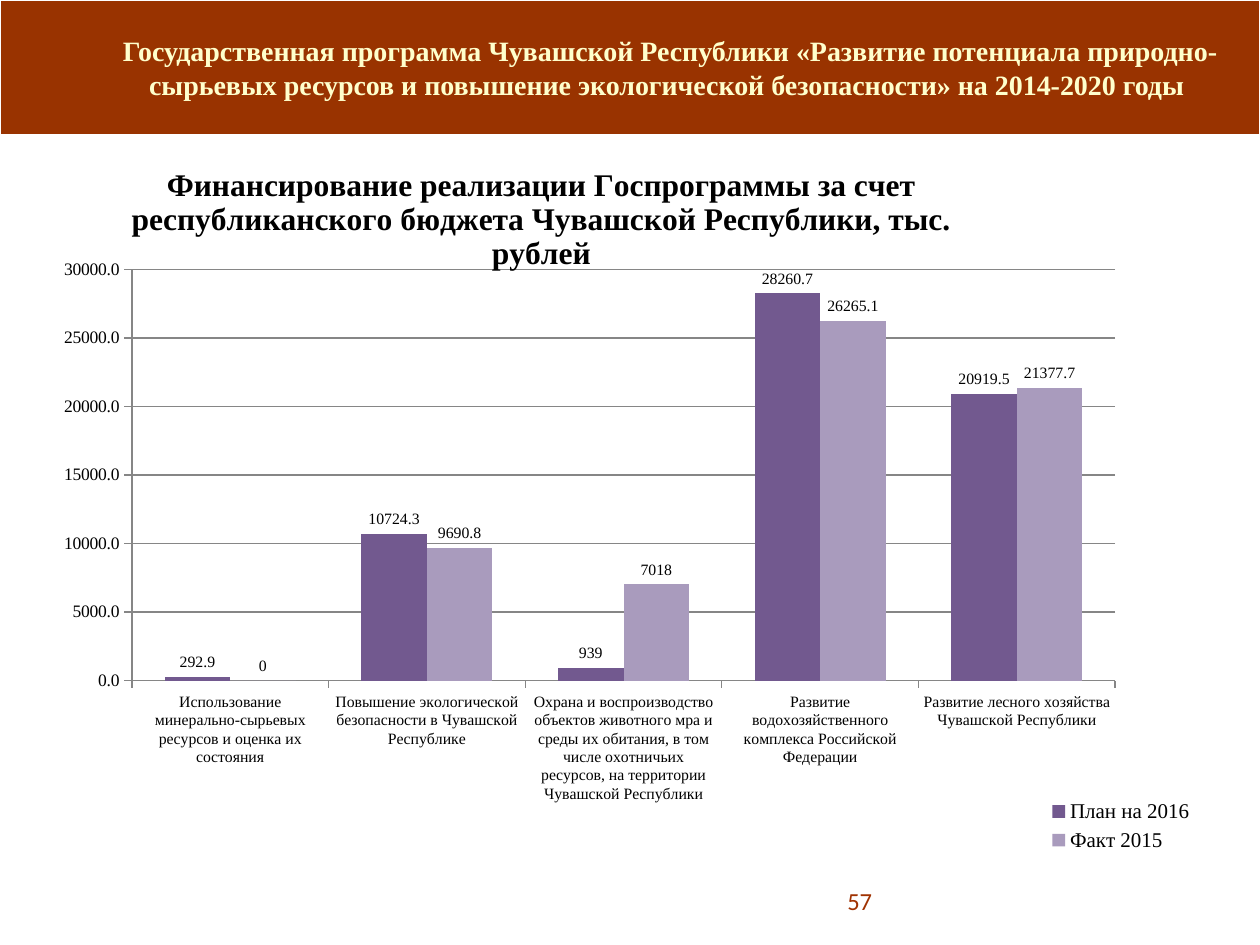
from lxml import etree
from pptx import Presentation
from pptx.chart.data import CategoryChartData as ChartData
from pptx.dml.color import RGBColor as Color
from pptx.enum.chart import XL_CHART_TYPE as ChartType, XL_LABEL_POSITION as LabelPosition
from pptx.enum.chart import XL_LEGEND_POSITION as LegendPosition, XL_TICK_MARK as TickMark
from pptx.enum.shapes import MSO_SHAPE as Shape
from pptx.enum.text import MSO_ANCHOR as Anchor, PP_ALIGN as Align
from pptx.oxml.ns import qn
from pptx.util import Inches, Pt

COLORS = {
    "band": "993300", "white": "FFFFFF", "heading": "FFFFCC", "number": "A03202",
    "text": "000000", "plan": "72598F", "fact": "A99BBD", "grid": "868686",
}
SERIF = "Times New Roman"


def set_font(font, size, color="text", name=SERIF, bold=False):
    for key, value in {"size": Pt(size), "name": name, "bold": bold}.items():
        setattr(font, key, value)
    font.color.rgb = Color.from_string(COLORS[color])


def place(part, index, inner=False, **shares):
    for old in part.findall(qn("c:layout")):
        part.remove(old)
    layout = etree.Element(qn("c:layout"))
    part.insert(index, layout)
    manual = etree.SubElement(layout, qn("c:manualLayout"))
    settings = {"layoutTarget": "inner"} if inner else {}
    settings |= {"xMode": "edge", "yMode": "edge"} | shares
    for tag, value in settings.items():
        etree.SubElement(manual, qn(f"c:{tag}")).set("val", str(value))


deck = Presentation()
deck.slide_width, deck.slide_height = Inches(10), Inches(7.5)
page = deck.slides.add_slide(deck.slide_layouts[6])
width, height = deck.slide_width, deck.slide_height
band_height = int(height / 7)

band = page.shapes.add_shape(Shape.RECTANGLE, 0, 0, width, band_height)
band.shadow.inherit = False
band.fill.solid()
band.fill.fore_color.rgb = Color.from_string(COLORS["band"])
band.line.color.rgb = Color.from_string(COLORS["white"])
band.line.width = Pt(0.75)

texts = [
    ("Государственная программа Чувашской Республики «Развитие потенциала "
     "природно-сырьевых ресурсов и повышение экологической безопасности» на 2014-2020 годы ",
     (0.083, 0, 0.898, 1 / 7), Align.CENTER, (16, "heading", SERIF, True)),
    ("57", (0.587, 0.927, 0.115, 0.053), Align.RIGHT, (14, "number", "Calibri")),
]
for words, (left, top, wide, high), align, style in texts:
    box = page.shapes.add_textbox(
        int(left * width), int(top * height), int(wide * width), int(high * height))
    frame = box.text_frame
    frame.word_wrap = True
    frame.vertical_anchor = Anchor.MIDDLE
    para = frame.paragraphs[0]
    para.alignment = align
    span = para.add_run()
    span.text = words
    set_font(span.font, *style)

data = ChartData(number_format="General")
data.categories = [
    "Использование минерально-сырьевых ресурсов и оценка их состояния",
    "Повышение экологической безопасности в Чувашской Республике",
    "Охрана и воспроизводство объектов животного мра и среды их обитания, "
    "в том числе охотничьих ресурсов, на территории Чувашской Республики",
    "Развитие водохозяйственного комплекса Российской Федерации",
    "Развитие лесного хозяйства Чувашской Республики",
]
data.add_series("План на 2016", [292.9, 10724.3, 939, 28260.7, 20919.5])
data.add_series("Факт 2015", [0, 9690.8, 7018, 26265.1, 21377.7])
chart = page.shapes.add_chart(
    ChartType.COLUMN_CLUSTERED, int(0.035 * width), int(0.16 * height),
    int(0.929 * width), int(0.84 * height), data).chart
set_font(chart.font, 18, name="Calibri")

chart.has_title = True
title = chart.chart_title
para = title.text_frame.paragraphs[0]
span = para.add_run()
span.text = ("Финансирование реализации Госпрограммы за счет "
             "республиканского бюджета Чувашской Республики, тыс. рублей")
set_font(span.font, 18, bold=True)
title.include_in_layout = False
place(title._element, 1, x=0.07, y=0.01)

chart.has_legend = True
legend = chart.legend
legend.position = LegendPosition.RIGHT
legend.include_in_layout = False
set_font(legend.font, 12)
place(legend._element, 1, x=0.85, y=0.81, w=0.14, h=0.08)

plot = chart.plots[0]
plot.gap_width, plot.overlap, plot.vary_by_categories = 100, 0, False
place(plot._element.getparent(), 0, inner=True, x=0.075, y=0.149, w=0.84, h=0.518)
for series, color in zip(plot.series, ("plan", "fact")):
    series.format.fill.solid()
    series.format.fill.fore_color.rgb = Color.from_string(COLORS[color])
    labels = series.data_labels
    labels.show_value = True
    labels.position = LabelPosition.OUTSIDE_END
    set_font(labels.font, 9)

values = chart.value_axis
scale = {"minimum_scale": 0, "maximum_scale": 30000, "major_unit": 5000,
         "has_major_gridlines": True}
for key, value in scale.items():
    setattr(values, key, value)
values.tick_labels.number_format = "0.0"
values.tick_labels.number_format_is_linked = False
for axis, size in ((chart.category_axis, 9), (values, 10)):
    axis.major_tick_mark = TickMark.OUTSIDE
    set_font(axis.tick_labels.font, size)
for lined in (chart.category_axis, values, values.major_gridlines):
    lined.format.line.color.rgb = Color.from_string(COLORS["grid"])
    lined.format.line.width = Pt(0.75)

deck.save("out.pptx")
